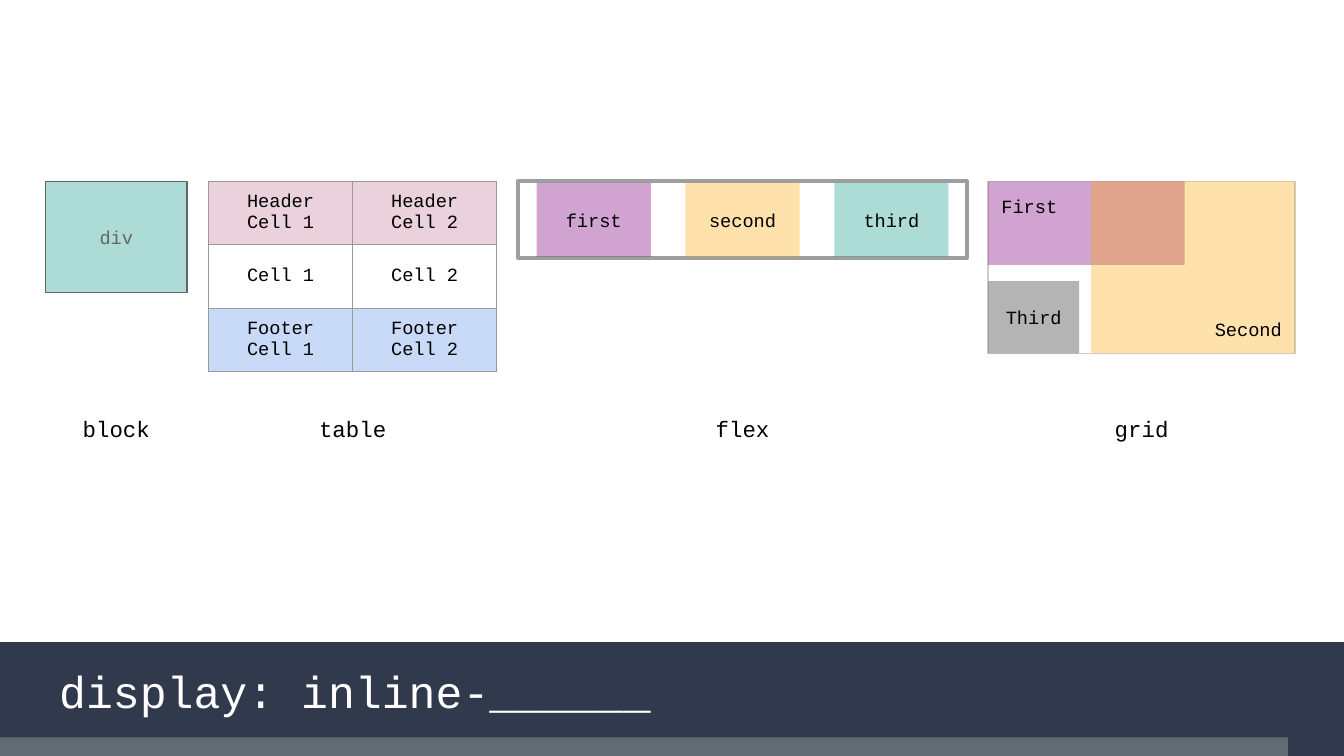
from lxml.etree import SubElement
from pptx import Presentation
from pptx.dml.color import RGBColor
from pptx.enum.shapes import MSO_SHAPE as Preset
from pptx.enum.text import MSO_ANCHOR as Anchor, MSO_AUTO_SIZE as AutoSize, PP_ALIGN as Align
from pptx.oxml.ns import qn
from pptx.util import Pt

NAVY, SLATE = RGBColor(0x31, 0x39, 0x4D), RGBColor(0x62, 0x6B, 0x73)
BLACK, WHITE = RGBColor(0, 0, 0), RGBColor(0xFF, 0xFF, 0xFF)
DARK_GRAY, MID_GRAY = RGBColor(0x66, 0x66, 0x66), RGBColor(0x99, 0x99, 0x99)
FRAME_GRAY, PALE_GRAY = RGBColor(0x9E, 0x9E, 0x9E), RGBColor(0xCC, 0xCC, 0xCC)
TEAL, PURPLE = RGBColor(0x00, 0x93, 0x84), RGBColor(0x80, 0x00, 0x80)
ORANGE = RGBColor(0xFF, 0xA5, 0x00)
PINK, BLUE = RGBColor(0xEA, 0xD1, 0xDC), RGBColor(0xC9, 0xDA, 0xF8)

FONT = "Courier New"
INSET = 7.2


def write(frame, text, size=10, color=BLACK, align=Align.CENTER, anchor=Anchor.MIDDLE):
    frame.text = text
    settings = {"word_wrap": True, "auto_size": AutoSize.NONE, "vertical_anchor": anchor}
    settings |= {f"margin_{side}": Pt(INSET) for side in ("left", "top", "right", "bottom")}
    for name, value in settings.items():
        setattr(frame, name, value)
    paragraph = frame.paragraphs[0]
    paragraph.alignment = align
    style_font(paragraph.font, size, color)


def style_font(font, size, color):
    for name, value in {"name": FONT, "size": Pt(size)}.items():
        setattr(font, name, value)
    font.color.rgb = color


def add_box(slide, box, fill=None, opacity=100, line=None, line_width=0.75):
    """Add a rectangle with an optional see-through fill and outline."""
    shape = slide.shapes.add_shape(Preset.RECTANGLE, *map(Pt, box))
    shape.shadow.inherit = False
    if fill is None:
        shape.fill.background()
    else:
        shape.fill.solid()
        shape.fill.fore_color.rgb = fill
        if opacity < 100:
            color = next(shape.fill._xPr.iter(qn("a:srgbClr")))
            SubElement(color, qn("a:alpha"), val=str(opacity * 1000))
    if line is None:
        shape.line.fill.background()
    else:
        shape.line.color.rgb = line
        shape.line.width = Pt(line_width)
    return shape


def add_block(slide, box):
    block = add_box(slide, box, TEAL, 32, DARK_GRAY)
    write(block.text_frame, "div", color=DARK_GRAY)


def add_cell_borders(cell):
    properties = cell._tc.get_or_add_tcPr()
    for index, side in enumerate(("lnL", "lnR", "lnT", "lnB")):
        border = properties.makeelement(qn(f"a:{side}"), {"w": str(Pt(0.75))})
        fill = SubElement(border, qn("a:solidFill"))
        SubElement(fill, qn("a:srgbClr"), val=str(MID_GRAY))
        properties.insert(index, border)


def add_display_table(slide, box):
    sections = [("Header Cell", PINK), ("Cell", WHITE), ("Footer Cell", BLUE)]
    table = slide.shapes.add_table(len(sections), 2, *map(Pt, box)).table
    for row, (label, fill) in enumerate(sections):
        for column in range(2):
            cell = table.cell(row, column)
            cell.text = f"{label} {column + 1}"
            cell.vertical_anchor = Anchor.MIDDLE
            cell.margin_top = cell.margin_bottom = 0
            paragraph = cell.text_frame.paragraphs[0]
            paragraph.alignment = Align.CENTER
            style_font(paragraph.font, 10, BLACK)
            cell.fill.solid()
            cell.fill.fore_color.rgb = fill
            add_cell_borders(cell)


def add_flex(slide, box):
    """Spread the items so that each has half a gap on either side."""
    left, top, width, height = box
    add_box(slide, box, line=FRAME_GRAY, line_width=2.25)
    items = [("first", PURPLE, 36), ("second", ORANGE, 33), ("third", TEAL, 32)]
    padding, item_width = 0.7, 61.2
    pitch = (width - 2 * padding) / len(items)
    first_left = left + padding + (pitch - item_width) / 2
    for index, (label, fill, opacity) in enumerate(items):
        item_box = (first_left + index * pitch, top + padding, item_width, height - 2 * padding)
        write(add_box(slide, item_box, fill, opacity).text_frame, label)


def add_grid(slide, box):
    """Overlap First and Second, with Third in the lower left corner."""
    left, top, width, height = box
    add_box(slide, box, line=PALE_GRAY)
    second_width, third_height = 109.2, 38.7
    areas = [
        ("First", (left, top, 105.2, 44.7), PURPLE, 36, Align.LEFT, Anchor.TOP),
        ("Second", (left + width - second_width, top, second_width, height),
         ORANGE, 33, Align.RIGHT, Anchor.BOTTOM),
        ("Third", (left, top + height - third_height, 48.8, third_height),
         DARK_GRAY, 49, Align.CENTER, Anchor.MIDDLE),
    ]
    for label, area_box, fill, opacity, align, anchor in areas:
        area = add_box(slide, area_box, fill, opacity)
        write(area.text_frame, label, align=align, anchor=anchor)


def add_caption(slide, box, text):
    write(slide.shapes.add_textbox(*map(Pt, box)).text_frame, text, size=12)


def add_title_band(slide, box):
    left, top, width, height = box
    add_box(slide, box, NAVY)
    title = slide.shapes.title
    slide.shapes._spTree.append(title._element)  # bring in front of the band
    title_box = {"left": left + 24.5, "top": top + 8, "width": 628.6, "height": 36}
    for name, value in title_box.items():
        setattr(title, name, Pt(value))
    write(title.text_frame, "display: inline-______", 24, WHITE, Align.LEFT)
    strip_height = 10
    add_box(slide, (left, top + height - strip_height, 690, strip_height), SLATE)


def main():
    deck = Presentation()
    deck.slide_width, deck.slide_height = Pt(720), Pt(405)
    slide = deck.slides.add_slide(deck.slide_layouts[5])
    add_title_band(slide, (0, 344, 720, 61))

    top, caption_top, caption_height = 97.2, 217, 25.2
    examples = [
        ("block", add_block, 24.4, 75.8, 59.6),
        ("table", add_display_table, 111.7, 154.4, 102),
        ("flex", add_flex, 277.5, 240.6, 41),
        ("grid", add_grid, 529.4, 164.4, 92.1),
    ]
    for name, draw, left, width, height in examples:
        draw(slide, (left, top, width, height))
        add_caption(slide, (left, caption_top, width, caption_height), name)

    deck.save("out.pptx")


if __name__ == "__main__":
    main()
